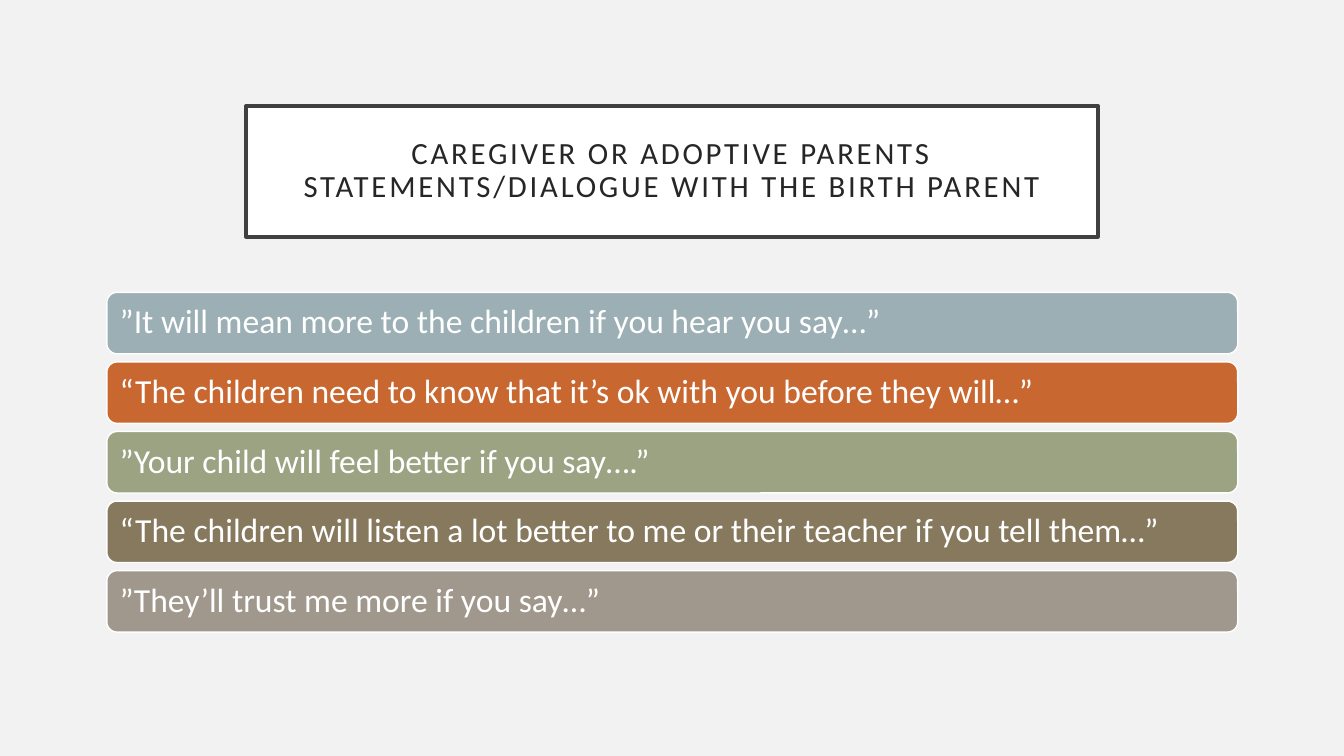
import pptx
import pptx.util
import pptx.dml.color
import pptx.enum.shapes
import pptx.enum.text

Pt = pptx.util.Pt
RGB = pptx.dml.color.RGBColor.from_string
PP_ALIGN = pptx.enum.text.PP_ALIGN

COLORS = {
    "background": "F2F2F2",
    "white": "FFFFFF",
    "title_border": "404040",
    "title_text": "262626",
    "blue": "9BAFB5",
    "orange": "C96731",
    "green": "9CA383",
    "brown": "87795D",
    "taupe": "A0988C",
}
STATEMENTS = [
    ("blue", "”It will mean more to the children if you hear you say…”"),
    ("orange", "“The children need to know that it’s ok with you before they will…”"),
    ("green", "”Your child will feel better if you say….”"),
    ("brown", "“The children will listen a lot better to me or their teacher if you tell them…”"),
    ("taupe", "”They’ll trust me more if you say…”"),
]
BAR_LEFT, BAR_TOP, BAR_WIDTH, BAR_HEIGHT, BAR_STEP = 76.3, 208.8, 807.8, 43.9, 49.7


def paint(shape, fill, border, border_width):
    shape.fill.solid()
    shape.fill.fore_color.rgb = RGB(COLORS[fill])
    shape.line.color.rgb = RGB(COLORS[border])
    shape.line.width = Pt(border_width)


def write(shape, text, size, color, align, inset_x, inset_y):
    frame = shape.text_frame
    frame.text = text
    frame.word_wrap = True
    frame.auto_size = pptx.enum.text.MSO_AUTO_SIZE.NONE
    frame.vertical_anchor = pptx.enum.text.MSO_ANCHOR.MIDDLE
    frame.margin_left = frame.margin_right = Pt(inset_x)
    frame.margin_top = frame.margin_bottom = Pt(inset_y)
    paragraph = frame.paragraphs[0]
    paragraph.alignment = align
    paragraph.line_spacing = 0.9
    paragraph.font.name = "Calibri"
    paragraph.font.size = Pt(size)
    paragraph.font.color.rgb = RGB(COLORS[color])
    return paragraph


# Slide
deck = pptx.Presentation()
deck.slide_width, deck.slide_height = Pt(960), Pt(540)
slide = deck.slides.add_slide(deck.slide_layouts[5])
slide.background.fill.solid()
slide.background.fill.fore_color.rgb = RGB(COLORS["background"])

# Framed title with letter spacing
title = slide.shapes.title
title.left, title.top, title.width, title.height = Pt(175.7), Pt(75.6), Pt(608.6), Pt(93.6)
paint(title, "white", "title_border", 2.5)
heading = write(title, "CAREGIVER OR ADOPTIVE PARENTS STATEMENTS/DIALOGUE WITH THE BIRTH PARENT",
                22, "title_text", PP_ALIGN.CENTER, 14.4, 14.4)
heading.runs[0].font._element.set("spc", "200")

# Statement bars
for row, (color, statement) in enumerate(STATEMENTS):
    bar = slide.shapes.add_shape(
        pptx.enum.shapes.MSO_SHAPE.ROUNDED_RECTANGLE,
        Pt(BAR_LEFT), Pt(BAR_TOP + row * BAR_STEP), Pt(BAR_WIDTH), Pt(BAR_HEIGHT))
    bar.shadow.inherit = False
    paint(bar, color, "white", 1)
    write(bar, statement, 24, "white", PP_ALIGN.LEFT, 7.2, 0)

deck.save("out.pptx")
